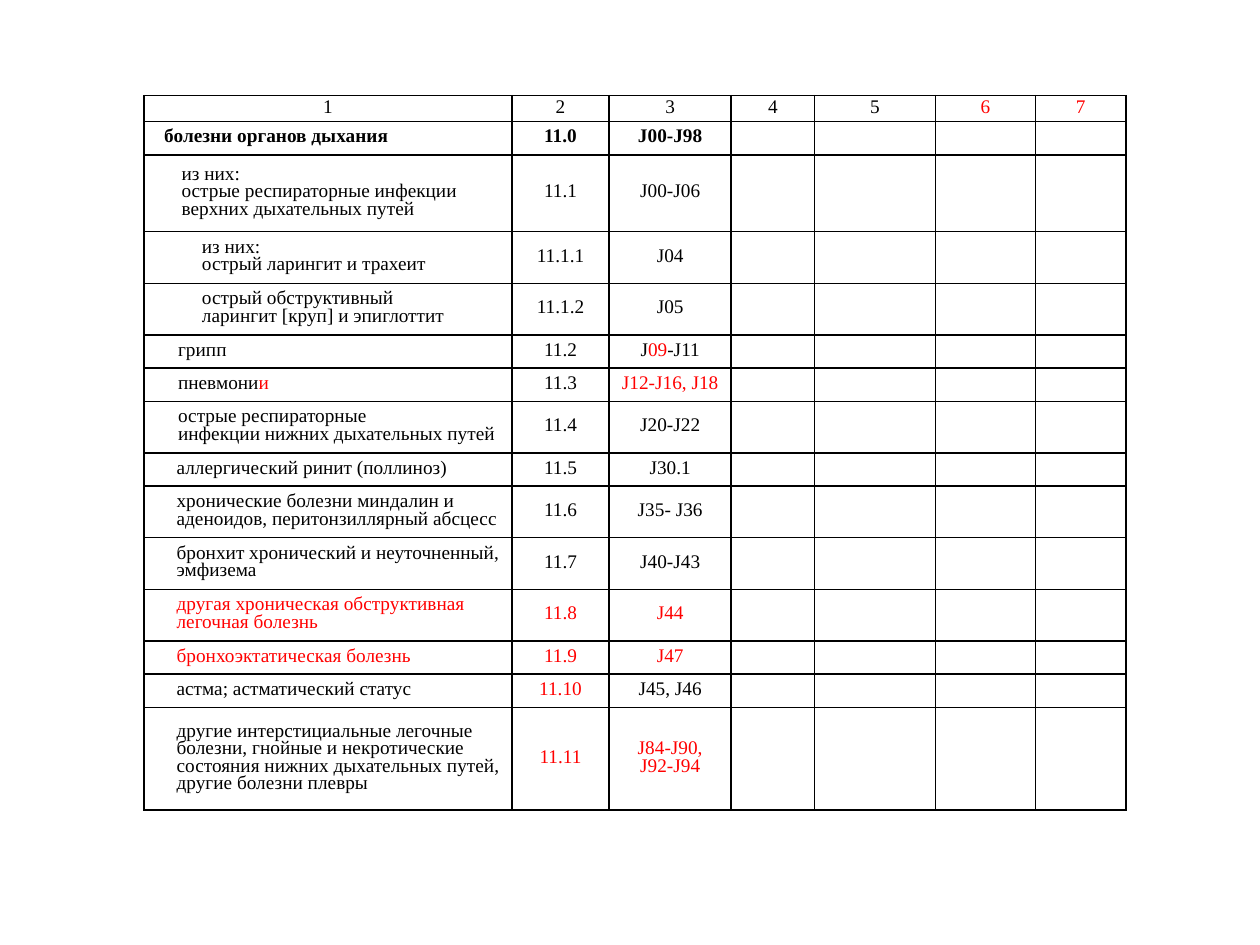
from lxml import etree
from pptx import Presentation
from pptx.dml.color import RGBColor
from pptx.enum.text import MSO_ANCHOR, PP_ALIGN
from pptx.oxml.ns import qn
from pptx.util import Cm, Pt

CENTER, LEFT = PP_ALIGN.CENTER, PP_ALIGN.LEFT
MIDDLE = MSO_ANCHOR.MIDDLE
BLACK = RGBColor(0, 0, 0)
RED = RGBColor(0xFF, 0, 0)
FONT = "Times New Roman"
RED_MARK = "|"

COL_WIDTHS = [7.42, 1.96, 2.46, 1.68, 2.44, 2.01, 1.83]
HEADER = ["1", "2", "3", "4", "5", "|6|", "|7|"]
HEADER_HEIGHT = 0.52
ROW_HEIGHTS = {1: 0.67, 2: 1.04, 3: 1.55, 4: 2.07}
DISEASES = [
    (0.23, "болезни органов дыхания", "11.0", "J00-J98"),
    (0.58, "из них:\nострые респираторные инфекции\nверхних дыхательных путей",
     "11.1", "J00-J06"),
    (0.99, "из них:\nострый ларингит и трахеит", "11.1.1", "J04"),
    (0.99, "острый обструктивный\nларингит [круп] и эпиглоттит", "11.1.2", "J05"),
    (0.51, "грипп", "11.2", "J|09|-J11"),
    (0.51, "пневмони|и|", "11.3", "|J12-J16, J18|"),
    (0.51, "острые респираторные\nинфекции нижних дыхательных путей",
     "11.4", "J20-J22"),
    (0.48, "аллергический ринит (поллиноз)", "11.5", "J30.1"),
    (0.48, "хронические болезни миндалин и\nаденоидов, перитонзиллярный абсцесс",
     "11.6", "J35- J36"),
    (0.48, "бронхит хронический и неуточненный,\nэмфизема", "11.7", "J40-J43"),
    (0.48, "|другая хроническая обструктивная|\n|легочная болезнь|", "|11.8|", "|J44|"),
    (0.48, "|бронхоэктатическая болезнь|", "|11.9|", "|J47|"),
    (0.48, "астма; астматический статус", "|11.10|", "J45, J46"),
    (0.48, "другие интерстициальные легочные\nболезни, гнойные и некротические\n"
     "состояния нижних дыхательных путей,\nдругие болезни плевры",
     "|11.11|", "|J84-J90,|\n|J92-J94|"),
]


def set_borders(cell):
    """Draw a thin black line on each side of the cell."""
    tc_pr = cell._tc.get_or_add_tcPr()
    for i, side in enumerate(("a:lnL", "a:lnR", "a:lnT", "a:lnB")):
        ln = etree.Element(qn(side), w=str(Pt(1)))
        fill = etree.SubElement(ln, qn("a:solidFill"))
        etree.SubElement(fill, qn("a:srgbClr"), val=str(BLACK))
        tc_pr.insert(i, ln)


def write_line(p, line, align, indent, bold):
    """Write one paragraph, with the stretches between marks in red."""
    p.alignment = align
    p.line_spacing = Pt(10)
    p.font.name, p.font.size, p.font.bold = FONT, Pt(11), bold
    p.font.color.rgb = BLACK
    if indent:
        p._p.get_or_add_pPr().set("marL", str(Cm(indent)))
    for i, part in enumerate(line.split(RED_MARK)):
        if part:
            r = p.add_run()
            r.text = part
            if i % 2:
                r.font.color.rgb = RED


def fill_cell(cell, text, align=CENTER, indent=0, bold=False):
    """Format a table cell and write its lines."""
    cell.fill.background()
    set_borders(cell)
    cell.vertical_anchor = MIDDLE
    cell.margin_left = cell.margin_right = Cm(0.18)
    cell.margin_top = cell.margin_bottom = 0
    tf = cell.text_frame
    for i, line in enumerate(text.split("\n")):
        p = tf.add_paragraph() if i else tf.paragraphs[0]
        write_line(p, line, align, indent, bold)


def add_disease_table(s, left, top, width, height):
    """Place the table of respiratory diseases in the given box."""
    table = s.shapes.add_table(len(DISEASES) + 1, len(COL_WIDTHS),
                               left, top, width, height).table
    table.first_row = table.horz_banding = False
    for col, share in zip(table.columns, COL_WIDTHS):
        col.width = int(width * share / sum(COL_WIDTHS))
    heights = [HEADER_HEIGHT] + [ROW_HEIGHTS[name.count("\n") + 1]
                                 for _, name, _, _ in DISEASES]
    for row, share in zip(table.rows, heights):
        row.height = int(height * share / sum(heights))
    for c, text in enumerate(HEADER):
        fill_cell(table.cell(0, c), text)
    for r, (indent, name, number, codes) in enumerate(DISEASES, 1):
        bold = r == 1
        fill_cell(table.cell(r, 0), name, LEFT, indent, bold)
        for c in range(1, len(COL_WIDTHS)):
            text = {1: number, 2: codes}.get(c, "")
            fill_cell(table.cell(r, c), text, bold=bold)


def main():
    """Build the slide and save it."""
    prs = Presentation()
    prs.slide_width, prs.slide_height = Cm(25.4), Cm(19.05)
    s = prs.slides.add_slide(prs.slide_layouts[6])
    add_disease_table(s, Cm(2.9), Cm(1.93), Cm(19.8), Cm(14.4))
    prs.save("out.pptx")


if __name__ == "__main__":
    main()
